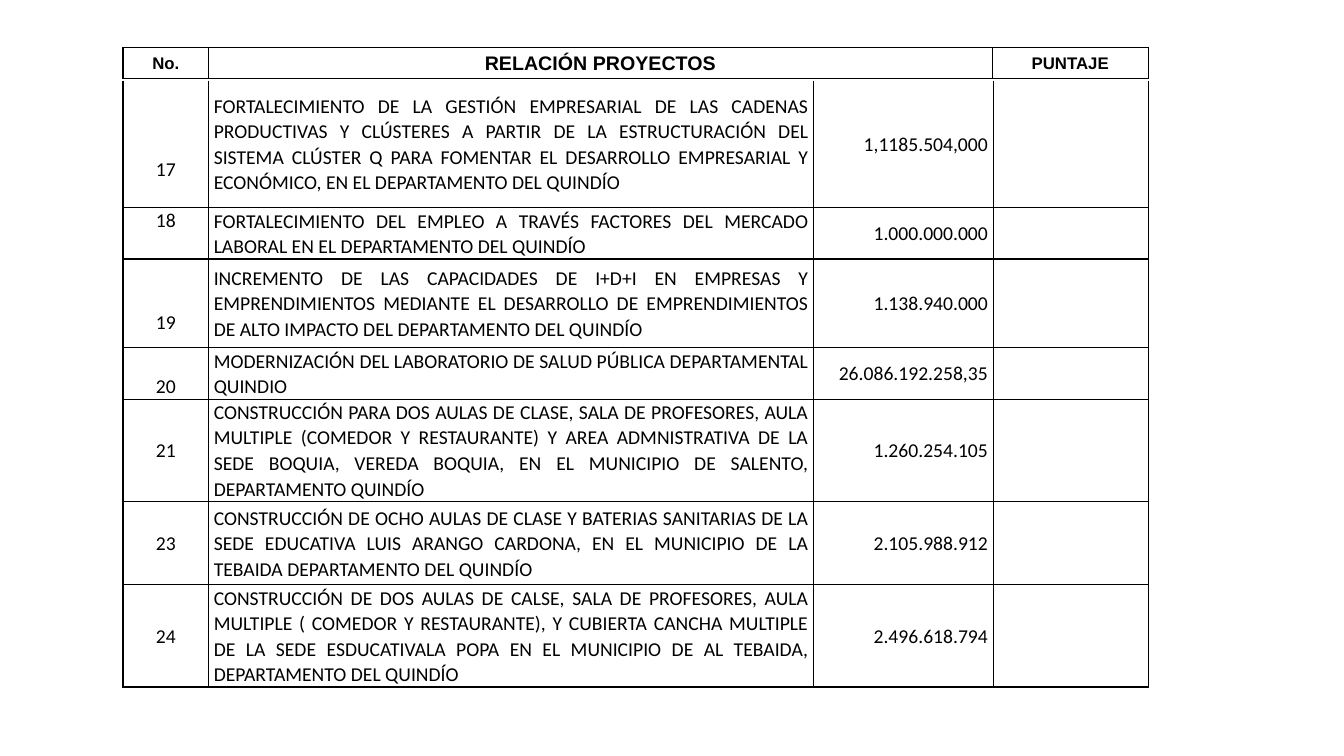
import dataclasses

import lxml.etree
import pptx
import pptx.dml.color
import pptx.enum.text
import pptx.oxml.ns
import pptx.util

Inches = pptx.util.Inches
Pt = pptx.util.Pt
ALIGN = pptx.enum.text.PP_ALIGN
ANCHOR = pptx.enum.text.MSO_ANCHOR


@dataclasses.dataclass(frozen=True)
class Theme:
    ink: str = "000000"
    paper: str = "FFFFFF"
    head_font: str = "Arial"
    body_font: str = "Calibri"
    small: int = 12
    large: int = 14
    rule: float = 1
    spacing: float = 1.07


THEME = Theme()
LEFT = 1.22
LINE = 0.25

HEADS = [("No.", THEME.small), ("RELACIÓN PROYECTOS", THEME.large),
         ("PUNTAJE", THEME.small)]

# Number, project, amount, row height, lines of space above a top-set number
# (None centres the number vertically).
PROJECTS = [
    ("17", "FORTALECIMIENTO DE LA GESTIÓN EMPRESARIAL DE LAS CADENAS "
     "PRODUCTIVAS Y CLÚSTERES A PARTIR DE LA ESTRUCTURACIÓN DEL SISTEMA "
     "CLÚSTER Q PARA FOMENTAR EL DESARROLLO EMPRESARIAL Y ECONÓMICO, EN EL "
     "DEPARTAMENTO DEL QUINDÍO", "1,1185.504,000", 1.26, 3),
    ("18", "FORTALECIMIENTO DEL EMPLEO A TRAVÉS FACTORES DEL MERCADO LABORAL "
     "EN EL DEPARTAMENTO DEL QUINDÍO", "1.000.000.000", 0.51, 0),
    ("19", "INCREMENTO DE LAS CAPACIDADES DE I+D+I EN EMPRESAS Y "
     "EMPRENDIMIENTOS MEDIANTE EL DESARROLLO DE EMPRENDIMIENTOS DE ALTO "
     "IMPACTO DEL DEPARTAMENTO DEL QUINDÍO", "1.138.940.000", 0.88, 2),
    ("20", "MODERNIZACIÓN DEL LABORATORIO DE SALUD PÚBLICA DEPARTAMENTAL "
     "QUINDIO", "26.086.192.258,35", 0.51, 1),
    ("21", "CONSTRUCCIÓN PARA DOS AULAS DE CLASE, SALA DE PROFESORES, AULA "
     "MULTIPLE (COMEDOR Y RESTAURANTE) Y AREA ADMNISTRATIVA DE LA SEDE "
     "BOQUIA, VEREDA BOQUIA, EN EL MUNICIPIO DE SALENTO, DEPARTAMENTO "
     "QUINDÍO", "1.260.254.105", 1.01, None),
    ("23", "CONSTRUCCIÓN DE OCHO AULAS DE CLASE Y BATERIAS SANITARIAS DE LA "
     "SEDE EDUCATIVA LUIS ARANGO CARDONA, EN EL MUNICIPIO DE LA TEBAIDA "
     "DEPARTAMENTO DEL QUINDÍO", "2.105.988.912", 0.83, None),
    ("24", "CONSTRUCCIÓN DE DOS AULAS DE CALSE, SALA DE PROFESORES, AULA "
     "MULTIPLE ( COMEDOR Y RESTAURANTE), Y CUBIERTA CANCHA MULTIPLE DE LA "
     "SEDE ESDUCATIVALA POPA EN EL MUNICIPIO DE AL TEBAIDA, DEPARTAMENTO "
     "DEL QUINDÍO", "2.496.618.794", 1.01, None),
]


def add_grid(slide, top, widths, heights):
    frame = slide.shapes.add_table(
        len(heights), len(widths), Inches(LEFT), Inches(top),
        Inches(sum(widths)), Inches(sum(heights)))
    table = frame.table
    table.first_row = table.horz_banding = False
    for col, width in zip(table.columns, widths):
        col.width = Inches(width)
    for row, height in zip(table.rows, heights):
        row.height = Inches(height)
    return table


def set_frame(cell, sides="LRTB"):
    """Rule the given sides, leave the others open, and fill the cell."""
    qn = pptx.oxml.ns.qn
    props = cell._tc.get_or_add_tcPr()
    for side in "LRTB":
        line = lxml.etree.SubElement(props, qn(f"a:ln{side}"),
                                     w=str(Pt(THEME.rule)))
        if side in sides:
            paint = lxml.etree.SubElement(line, qn("a:solidFill"))
            lxml.etree.SubElement(paint, qn("a:srgbClr"), val=THEME.ink)
        else:
            lxml.etree.SubElement(line, qn("a:noFill"))
    cell.fill.solid()
    cell.fill.fore_color.rgb = pptx.dml.color.RGBColor.from_string(THEME.paper)


def set_text(cell, text, align, font, size, bold=False, lines=None):
    cell.margin_left = cell.margin_right = Inches(0.05)
    cell.margin_top = Inches(LINE * (lines or 0))
    cell.margin_bottom = 0
    cell.vertical_anchor = ANCHOR.MIDDLE if lines is None else ANCHOR.TOP
    para = cell.text_frame.paragraphs[0]
    para.alignment = align
    para.line_spacing = THEME.spacing
    run = para.add_run()
    run.text = text
    run.font.name = font
    run.font.size = Pt(size)
    run.font.bold = bold
    run.font.color.rgb = pptx.dml.color.RGBColor.from_string(THEME.ink)


def add_header(slide):
    table = add_grid(slide, 0.47, [0.85, 7.77, 1.55], [0.31])
    for cell, (text, size) in zip(table.iter_cells(), HEADS):
        set_frame(cell)
        set_text(cell, text, ALIGN.CENTER, THEME.head_font, size, bold=True)


def add_body(slide):
    heights = [project[3] for project in PROJECTS]
    table = add_grid(slide, 0.8, [0.85, 6, 1.78, 1.54], heights)
    for idx, (number, title, amount, _, lines) in enumerate(PROJECTS):
        cells = table.rows[idx].cells
        for cell in cells:
            set_frame(cell, "LRTB" if idx else "LRB")
        items = [(number, ALIGN.CENTER, lines), (title, ALIGN.JUSTIFY, None),
                 (amount, ALIGN.RIGHT, None)]
        for cell, (text, align, gap) in zip(cells, items):
            set_text(cell, text, align, THEME.body_font, THEME.large,
                     lines=gap)


def main():
    deck = pptx.Presentation()
    deck.slide_width = Inches(13.33)
    deck.slide_height = Inches(7.5)
    slide = deck.slides.add_slide(deck.slide_layouts[6])
    add_header(slide)
    add_body(slide)
    deck.save("out.pptx")


if __name__ == "__main__":
    main()
